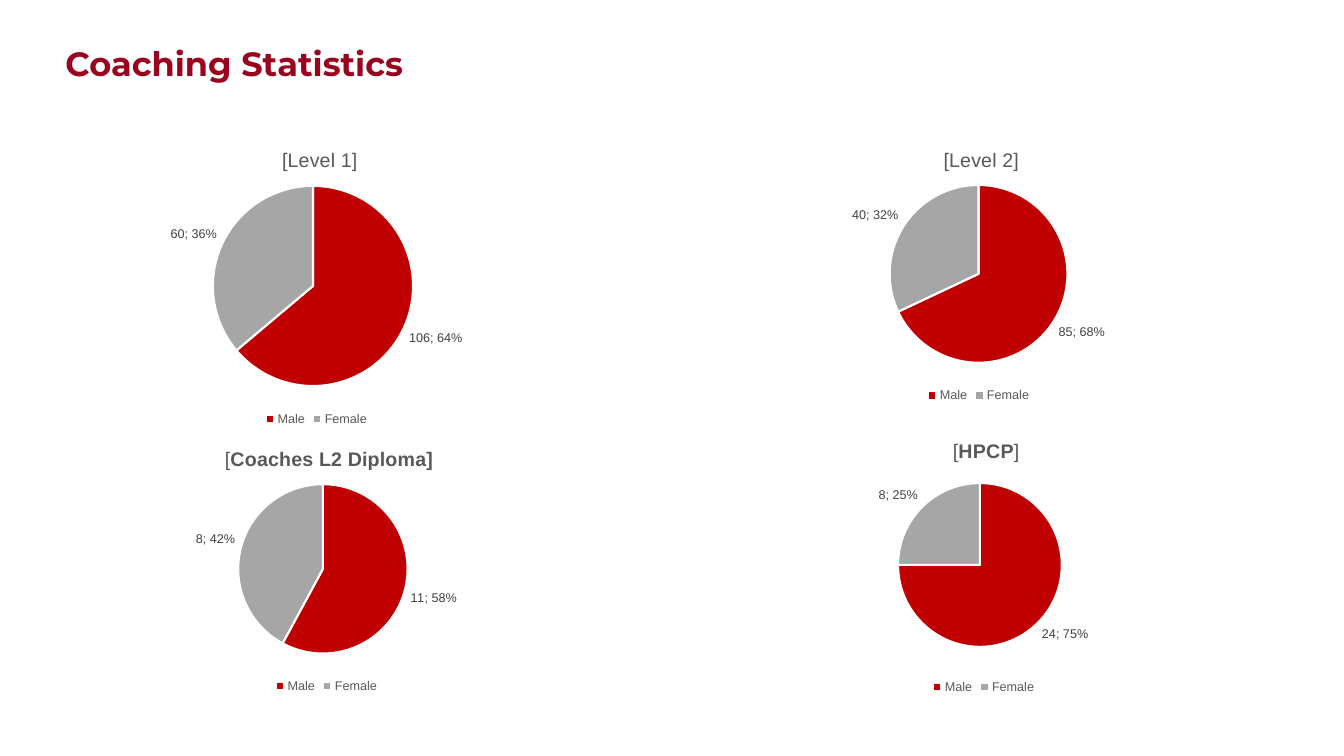
"""Build the coaching statistics slide with four pie charts."""
from dataclasses import dataclass
from typing import Any

from lxml import etree
from pptx import Presentation
from pptx.chart.data import CategoryChartData
from pptx.dml.color import RGBColor
from pptx.enum.chart import XL_CHART_TYPE, XL_LABEL_POSITION, XL_LEGEND_POSITION
from pptx.enum.text import MSO_ANCHOR
from pptx.oxml.ns import qn
from pptx.util import Pt

PIE = XL_CHART_TYPE.PIE
OUTSIDE = XL_LABEL_POSITION.OUTSIDE_END
BOTTOM = XL_LEGEND_POSITION.BOTTOM
TOP = MSO_ANCHOR.TOP

WINE = RGBColor(0x9A, 0x03, 0x1E)
RED = RGBColor(0xC0, 0x00, 0x00)
SILVER = RGBColor(0xA6, 0xA6, 0xA6)
WHITE = RGBColor(0xFF, 0xFF, 0xFF)
GRAY = RGBColor(0x59, 0x59, 0x59)
DARK = RGBColor(0x40, 0x40, 0x40)

GROUPS = {"Male": RED, "Female": SILVER}
HEAD_DROP = 11.5


@dataclass(frozen=True)
class Panel:
    """A pie chart: frame, heading runs with bold flags, pie place, values."""
    left: float
    top: float
    width: float
    height: float
    head: tuple[tuple[str, bool], ...]
    head_x: float
    pie_x: float
    pie_y: float
    size: float
    counts: tuple[int, int]


PANELS = (
    Panel(60.5, 305.3, 345.6, 193, (("[", False), ("Coaches L2 Diploma]", True)),
          158.5, 230.7, 406.4, 121, (11, 8)),
    Panel(519.1, 299.5, 367.2, 199.4, (("[", False), ("HPCP", True), ("]", False)),
          678.5, 700, 403.6, 117, (24, 8)),
    Panel(46.1, 91.4, 360, 216, (("[Level 1]", False),),
          199, 223.6, 204.3, 143, (106, 60)),
    Panel(519.1, 91.4, 360, 199.4, (("[Level 2]", False),),
          671.5, 699, 195.7, 127, (85, 40)),
)


def style(font: Any, size: float, color: RGBColor, name: str = "Arial") -> None:
    """Set size, colour and typeface of a font."""
    font.size = Pt(size)
    font.color.rgb = color
    font.name = name


def place(part: Any, index: int, **items: Any) -> None:
    """Give a chart part a manual layout."""
    for old in part.findall(qn("c:layout")):
        part.remove(old)
    layout = etree.Element(qn("c:layout"))
    manual = etree.SubElement(layout, qn("c:manualLayout"))
    for tag, value in items.items():
        text = value if isinstance(value, str) else f"{value:.4f}"
        etree.SubElement(manual, qn(f"c:{tag}")).set("val", text)
    part.insert(index, layout)


def add_title(slide: Any) -> None:
    """Add the slide title."""
    box = slide.shapes.add_textbox(Pt(39.6), Pt(30.2), Pt(779), Pt(37.4))
    frame = box.text_frame
    frame.word_wrap = True
    frame.vertical_anchor = TOP
    para = frame.paragraphs[0]
    para.text = "Coaching Statistics"
    para.line_spacing = 0.9
    style(para.font, 24, WINE, "Montserrat")
    para.font.bold = True


def add_head(chart: Any, panel: Panel) -> None:
    """Add the heading of one chart."""
    title = chart.chart_title
    para = title.text_frame.paragraphs[0]
    style(para.font, 14, GRAY)
    para.font.bold = False
    for text, bold in panel.head:
        run = para.add_run()
        run.text = text
        run.font.bold = bold
    place(title._element, 1, xMode="edge", yMode="edge",
          x=(panel.head_x - panel.left) / panel.width,
          y=HEAD_DROP / panel.height)


def add_labels(series: Any) -> None:
    """Label the slices with value and percentage."""
    labels = series.data_labels
    labels.show_value = True
    labels.show_percentage = True
    labels.position = OUTSIDE
    style(labels.font, 9, DARK)
    gap = etree.Element(qn("c:separator"))
    gap.text = "; "
    labels._element.find(qn("c:showBubbleSize")).addnext(gap)


def add_pie(slide: Any, panel: Panel) -> None:
    """Draw one panel as a pie chart."""
    data = CategoryChartData()
    data.categories = list(GROUPS)
    data.add_series("Series 1", panel.counts)
    chart = slide.shapes.add_chart(
        PIE, Pt(panel.left), Pt(panel.top), Pt(panel.width), Pt(panel.height), data
    ).chart
    chart.font.name = "Arial"
    chart.font.size = Pt(10)
    add_head(chart, panel)
    chart.has_legend = True
    chart.legend.position = BOTTOM
    chart.legend.include_in_layout = False
    style(chart.legend.font, 9, GRAY)
    plot = chart.plots[0]
    plot.vary_by_categories = True
    series = plot.series[0]
    for index, color in enumerate(GROUPS.values()):
        form = series.points[index].format
        form.fill.solid()
        form.fill.fore_color.rgb = color
        form.line.color.rgb = WHITE
        form.line.width = Pt(1.5)
    add_labels(series)
    half = panel.size / 2
    area = chart._chartSpace.find(".//" + qn("c:plotArea"))
    place(area, 0, layoutTarget="inner", xMode="edge", yMode="edge",
          x=(panel.pie_x - half - panel.left) / panel.width,
          y=(panel.pie_y - half - panel.top) / panel.height,
          w=panel.size / panel.width, h=panel.size / panel.height)


def main() -> None:
    """Create and save the deck."""
    deck = Presentation()
    deck.slide_width, deck.slide_height = Pt(960), Pt(540)
    slide = deck.slides.add_slide(deck.slide_layouts[6])
    add_title(slide)
    for panel in PANELS:
        add_pie(slide, panel)
    deck.save("out.pptx")


if __name__ == "__main__":
    main()
